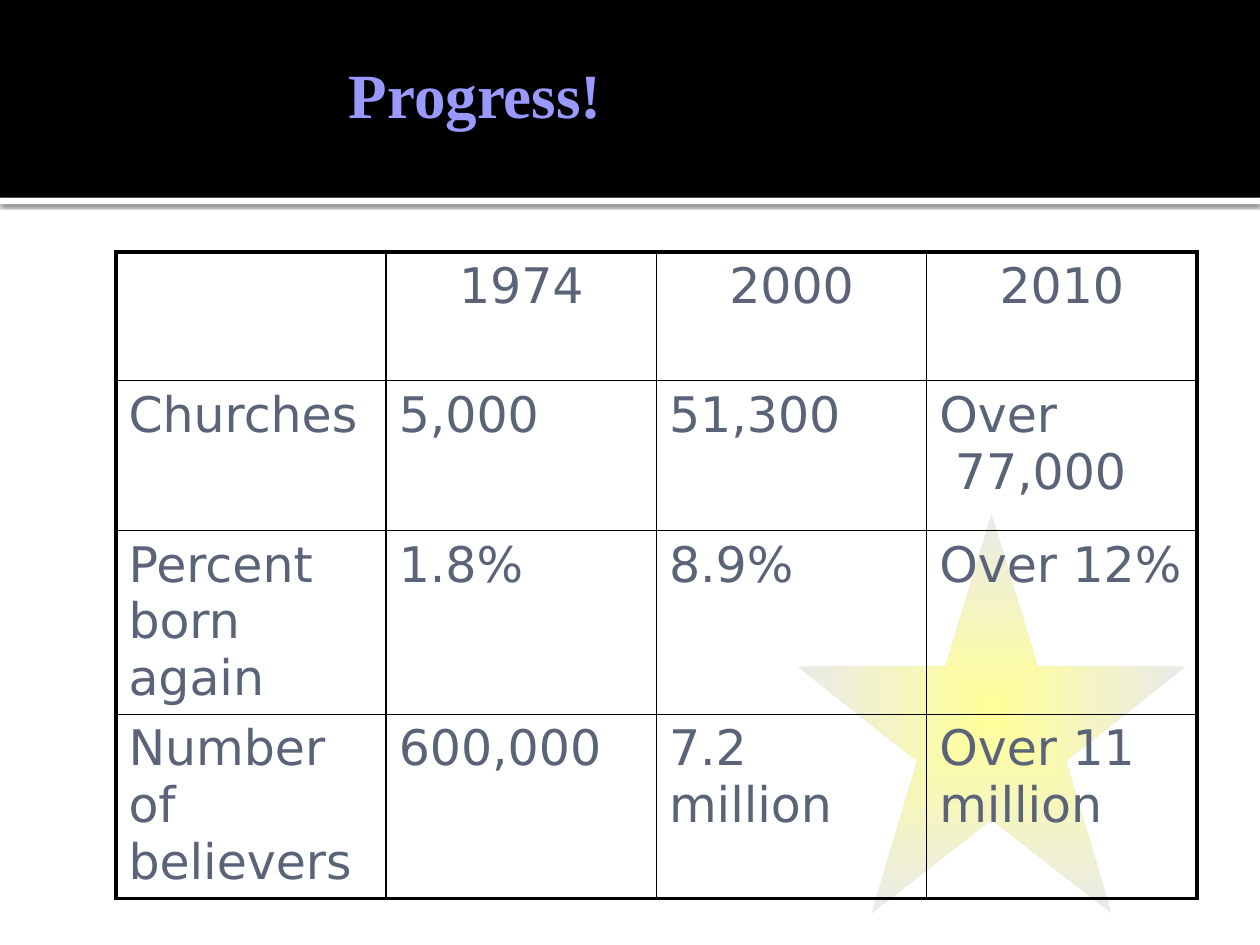
import pptx
import pptx.util
import pptx.dml.color
import pptx.enum.shapes
import pptx.enum.text
import pptx.oxml
import pptx.oxml.ns

Inches, Pt = pptx.util.Inches, pptx.util.Pt
SHAPES = pptx.enum.shapes.MSO_SHAPE
NAMESPACE = pptx.oxml.ns.nsdecls("a")


def color(value):
    return pptx.dml.color.RGBColor.from_string(value)


def add_block(kind, left, top, width, height, fill):
    block = page.shapes.add_shape(kind, Inches(left), Inches(top), Inches(width), Inches(height))
    block.shadow.inherit = False
    block.line.fill.background()
    block.fill.solid()
    block.fill.fore_color.rgb = color(fill)
    return block


deck = pptx.Presentation()
deck.slide_width, deck.slide_height = Inches(10), Inches(7.5)
page = deck.slides.add_slide(deck.slide_layouts[6])

# Header band with a shadowed white rule beneath it
rule = add_block(SHAPES.RECTANGLE, 0, 1.57, 10, 0.05, "FFFFFF")
effects = rule._element.spPr.find(pptx.oxml.ns.qn("a:effectLst"))
effects.append(pptx.oxml.parse_xml(
    f'<a:outerShdw {NAMESPACE} blurRad="{Pt(2.5)}" dist="{Pt(0.8)}" dir="5400000" rotWithShape="0">'
    '<a:srgbClr val="000000"><a:alpha val="60000"/></a:srgbClr></a:outerShdw>'))
add_block(SHAPES.RECTANGLE, 0, 0, 10, 1.57, "000000")

# Star that fades outwards from its centre
star = add_block(SHAPES.STAR_5_POINT, 6.33, 4.08, 3.08, 3.17, "FFFF99")
star.fill.gradient()
for stop, shade in zip(star.fill.gradient_stops, ("FFFF99", "EAEAEA")):
    stop.color.rgb = color(shade)
gradient = star._element.spPr.find(pptx.oxml.ns.qn("a:gradFill"))
gradient.remove(gradient.find(pptx.oxml.ns.qn("a:lin")))
gradient.append(pptx.oxml.parse_xml(
    f'<a:path {NAMESPACE} path="shape">'
    '<a:fillToRect l="50000" t="50000" r="50000" b="50000"/></a:path>'))

# Progress table
rows = [
    ["", "1974", "2000", "2010"],
    ["Churches", "5,000", "51,300", "Over\v 77,000"],
    ["Percent born again", "1.8%", "8.9%", "Over 12%"],
    ["Number of believers", "600,000", "7.2 million", "Over 11 million"],
]
row_heights = [1.02, 1.19, 1.46, 1.46]
column_width = 2.145
last = len(rows) - 1
frame = page.shapes.add_table(len(rows), len(rows[0]), Inches(0.92), Inches(2),
                              Inches(4 * column_width), Inches(sum(row_heights)))
table = frame.table
table.first_row = table.horz_banding = False
for column in table.columns:
    column.width = Inches(column_width)
for r, (texts, height) in enumerate(zip(rows, row_heights)):
    table.rows[r].height = Inches(height)
    for c, text in enumerate(texts):
        cell = table.cell(r, c)
        cell.fill.background()
        cell.text_frame.text = text
        para = cell.text_frame.paragraphs[0]
        para.font.size = Pt(28)
        if r == 0:
            para.alignment = pptx.enum.text.PP_ALIGN.CENTER
        for span in para.runs:
            span.font.size = Pt(28)
            span.font.name = "DejaVu Sans"
            span.font.color.rgb = color("5A6378")

        # Thick lines outside, thin lines inside
        outer_edges = {"lnL": c == 0, "lnR": c == last, "lnT": r == 0, "lnB": r == last}
        for position, (edge, outer) in enumerate(outer_edges.items()):
            border = pptx.oxml.parse_xml(
                f'<a:{edge} {NAMESPACE} w="{Pt(2.25 if outer else 1)}">'
                f'<a:solidFill><a:srgbClr val="000000"/></a:solidFill></a:{edge}>')
            cell._tc.get_or_add_tcPr().insert(position, border)

# Title
title = page.shapes.add_textbox(Inches(2.67), Inches(0.39), Inches(4.92), Inches(1.18))
title.text_frame.word_wrap = True
title.text_frame.text = "Progress!"
span = title.text_frame.paragraphs[0].runs[0]
span.font.size = Pt(36)
span.font.bold = True
span.font.name = "Times New Roman"
span.font.color.rgb = color("9999FF")

deck.save("out.pptx")
